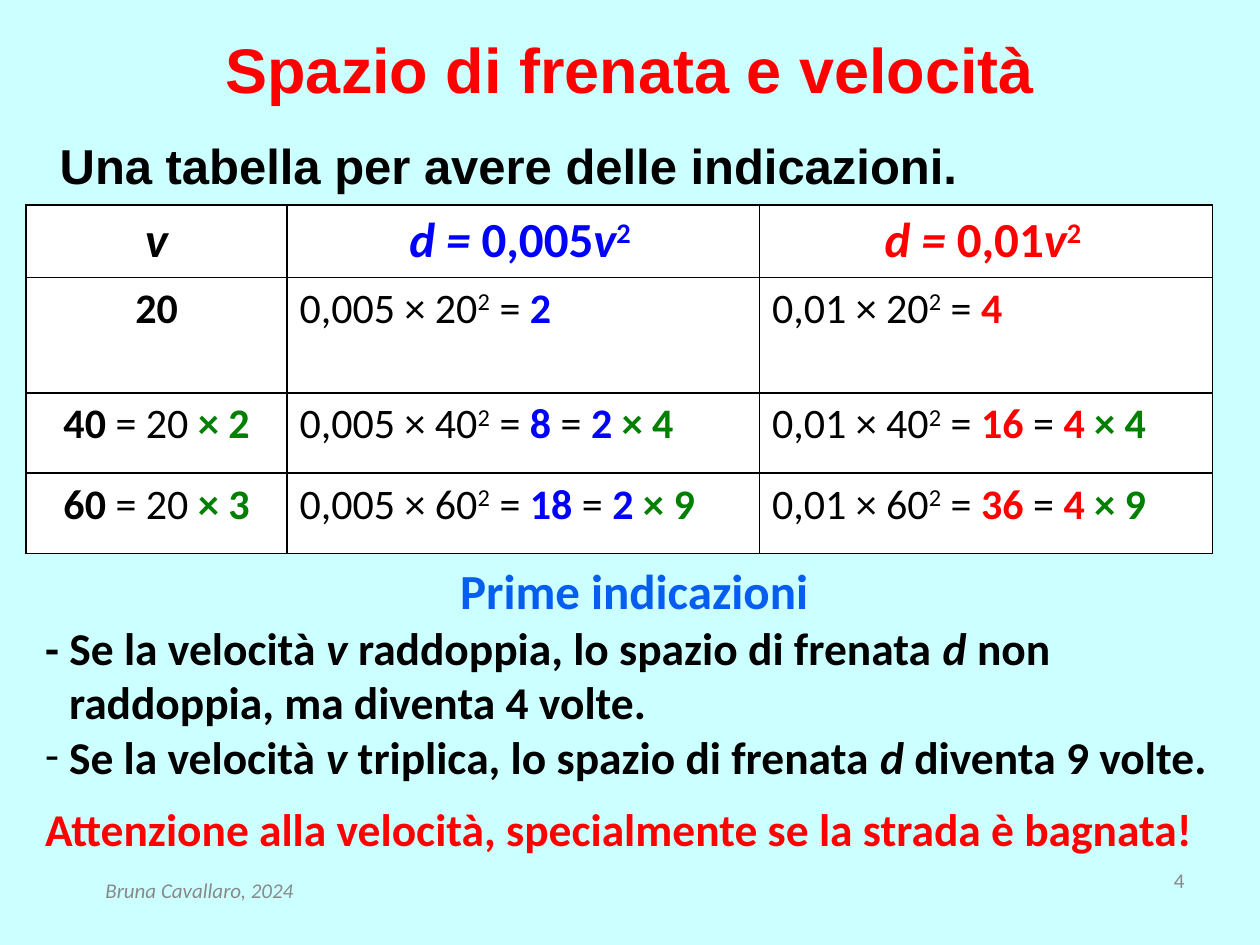
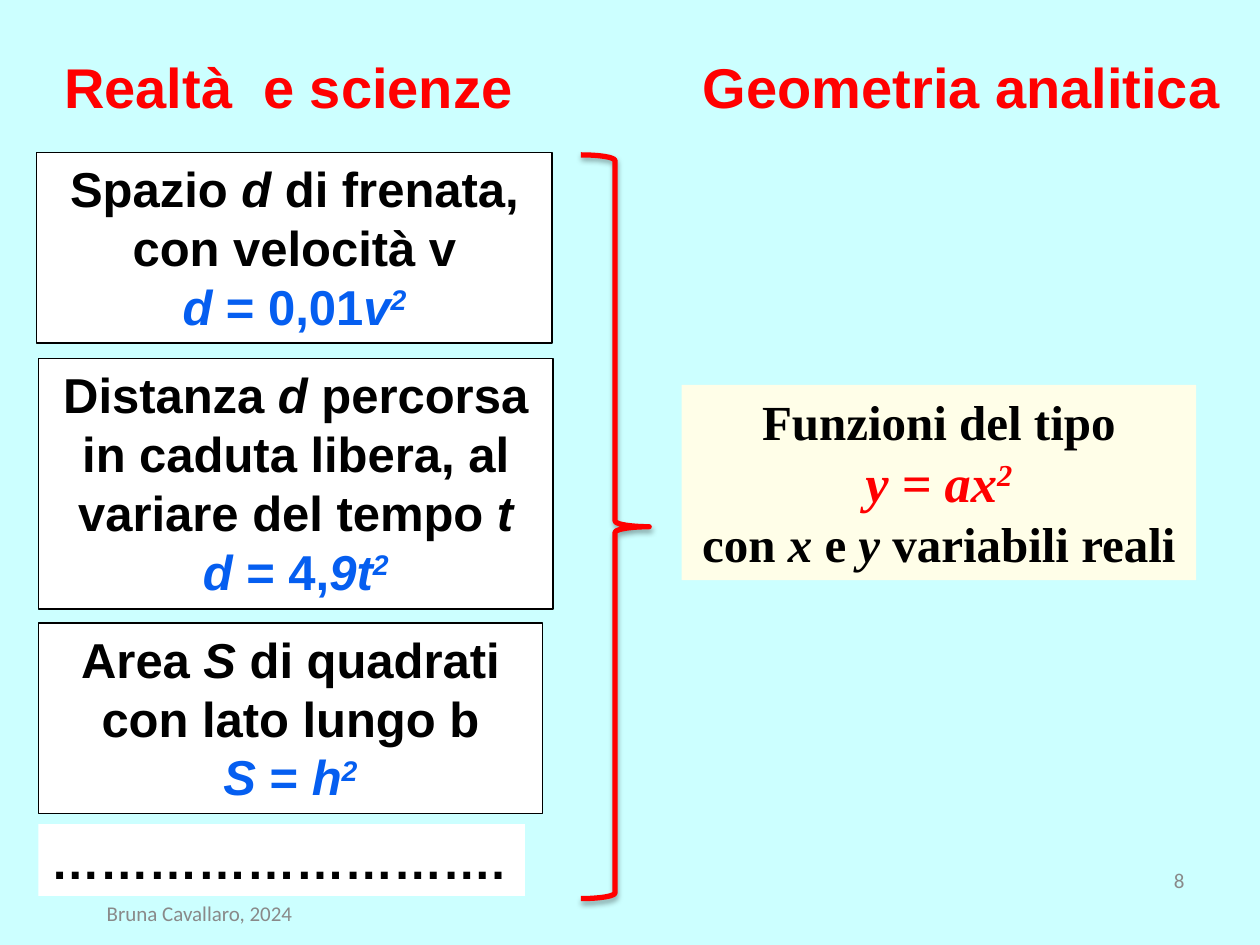
from lxml import etree
from pptx import Presentation
from pptx import util as u
from pptx.dml.color import RGBColor
from pptx.enum import shapes, text
from pptx.oxml import parse_xml
from pptx.oxml.ns import nsdecls, qn

Pt = u.Pt
LEFT, CENTER, RIGHT = text.PP_ALIGN.LEFT, text.PP_ALIGN.CENTER, text.PP_ALIGN.RIGHT
TOP, MIDDLE = text.MSO_ANCHOR.TOP, text.MSO_ANCHOR.MIDDLE
COLORS = {
    "background": "CCFFFF", "white": "FFFFFF", "cream": "FFFEE8",
    "black": "000000", "gray": "898989", "red": "FF0000",
    "blue": "0000FF", "azure": "055EF0", "green": "008000",
}
HEADING, BODY, SERIF = "Arial", "Calibri", "Times New Roman"


def rgb(name):
    return RGBColor.from_string(COLORS[name])


class SlideBuilder:
    def __init__(self, deck):
        self.deck = deck
        self.slide = None

    def new_slide(self, number, footer_top, footer_style=""):
        self.slide = self.deck.slides.add_slide(self.deck.slide_layouts[5])
        self.slide.background.fill.solid()
        self.slide.background.fill.fore_color.rgb = rgb("background")
        self.label((516, 492, 168, 37), [str(number)], BODY, 12, "gray", RIGHT, bold=False)
        self.label((0, footer_top, 228, 29), [[("Bruna Cavallaro, 2024", footer_style)]],
                   BODY, 12, "gray", CENTER, bold=False)

    def fill_frame(self, frame, lines, font, size, color="black", align=LEFT, anchor=TOP,
                   bold=True):
        frame.word_wrap = True
        frame.auto_size = text.MSO_AUTO_SIZE.NONE
        frame.vertical_anchor = anchor
        self.add_lines(frame, lines, font, size, color, align, bold)

    def add_lines(self, frame, lines, font, size, color="black", align=LEFT, bold=True):
        for index, line in enumerate(lines):
            para = frame.paragraphs[0] if index == 0 else frame.add_paragraph()
            para.alignment = align
            for words, style in [(line, "")] if isinstance(line, str) else line:
                marks = style.split()
                span = para.add_run()
                span.text = words
                span.font.name, span.font.size = font, Pt(size)
                span.font.bold = bold and "plain" not in marks
                span.font.italic = "italic" in marks
                span.font.color.rgb = rgb(next((m for m in marks if m in COLORS), color))
                if "super" in marks:
                    span.font._element.set("baseline", "30000")

    def title(self, area, words, size, align=LEFT):
        box = self.slide.shapes.title
        box.left, box.top, box.width, box.height = map(Pt, area)
        self.fill_frame(box.text_frame, [words], HEADING, size, "red", align, MIDDLE)

    def label(self, area, lines, *style, **options):
        box = self.slide.shapes.add_textbox(*map(Pt, area))
        self.fill_frame(box.text_frame, lines, *style, **options)
        return box

    def panel(self, area, lines, fill="white", outlined=True, font=HEADING, align=CENTER):
        box = self.slide.shapes.add_shape(shapes.MSO_SHAPE.RECTANGLE, *map(Pt, area))
        box.shadow.inherit = False
        box.fill.solid()
        box.fill.fore_color.rgb = rgb(fill)
        if outlined:
            box.line.color.rgb = rgb("black")
            box.line.width = Pt(0.75)
        else:
            box.line.fill.background()
        self.fill_frame(box.text_frame, lines, font, 28, align=align)
        return box

    def brace(self, area):
        brace = self.slide.shapes.add_shape(shapes.MSO_SHAPE.RIGHT_BRACE, *map(Pt, area))
        brace.fill.background()
        brace.line.color.rgb = rgb("red")
        brace.line.width = Pt(3)
        brace.shadow.inherit = False
        effects = brace._element.spPr.find(qn("a:effectLst"))
        effects.append(parse_xml(
            f'<a:outerShdw {nsdecls("a")} blurRad="{Pt(3.1)}" dist="{Pt(1.8)}" dir="5400000" '
            'rotWithShape="0"><a:srgbClr val="000000"><a:alpha val="35000"/></a:srgbClr>'
            '</a:outerShdw>'))

    def table(self, area, widths, heights, rows):
        table = self.slide.shapes.add_table(len(rows), len(widths), *map(Pt, area)).table
        table.first_row = table.horz_banding = False
        for column, width in zip(table.columns, widths):
            column.width = Pt(width)
        for row, height in zip(table.rows, heights):
            row.height = Pt(height)
        for r, row in enumerate(rows):
            for c, spans in enumerate(row):
                cell = table.cell(r, c)
                self.borders(cell)
                cell.fill.solid()
                cell.fill.fore_color.rgb = rgb("white")
                centered = r == 0 or c == 0
                self.add_lines(cell.text_frame, [spans], BODY, 28 if r == 0 else 24,
                               align=CENTER if centered else LEFT)

    def borders(self, cell):
        properties = cell._tc.get_or_add_tcPr()
        for side in ("lnL", "lnR", "lnT", "lnB"):
            line = etree.SubElement(properties, qn(f"a:{side}"), w=str(Pt(1)))
            fill = etree.SubElement(line, qn("a:solidFill"))
            etree.SubElement(fill, qn("a:srgbClr"), val=COLORS["black"])

    def hang(self, para, bullet=None):
        properties = para._p.get_or_add_pPr()
        properties.set("marL", str(Pt(14.4)))
        properties.set("indent", str(-Pt(13.7)))
        if bullet:
            etree.SubElement(properties, qn("a:buFont"), typeface=BODY)
            etree.SubElement(properties, qn("a:buChar"), char=bullet)


def formula_header(coefficient, color):
    return [("d = ", f"italic {color}"), (coefficient, color),
            ("v", f"italic {color}"), ("2 ", f"super {color}")]


def speed_cell(factor):
    spans = [(str(20 * factor), "")]
    if factor > 1:
        spans += [(" = 20 ", "plain"), (f"× {factor}", "green")]
    return spans


def distance_cell(coefficient, color, base, factor):
    square = factor ** 2
    spans = [(f"{coefficient} × {20 * factor}", "plain"), ("2", "plain super"),
             (" = ", "plain"), (str(base * square), color)]
    if factor > 1:
        spans += [(" = ", "plain"), (f"{base} ", color), (f"× {square}", "green")]
    return spans


def braking_slide(page):
    page.new_slide(4, 498, "italic")
    page.title((36, 12, 648, 54), "Spazio di frenata e velocità", 36, CENTER)
    page.label((27, 74, 666, 48), ["Una tabella per avere delle indicazioni."], HEADING, 28)

    roads = [("0,005", "blue", 2), ("0,01", "red", 4)]
    header = [[("v", "italic")]] + [formula_header(*road[:2]) for road in roads]
    rows = [header] + [[speed_cell(n)] + [distance_cell(*road, n) for road in roads]
                       for n in (1, 2, 3)]
    page.table((15, 117, 678, 199), (149, 270, 259), (41, 66, 46, 46), rows)

    notes = page.label((18, 317, 688, 177), [
        [("Prime indicazioni", "azure")],
        [("- Se la velocità ", ""), ("v", "italic"), (" raddoppia, lo spazio di frenata ", ""),
         ("d", "italic"), (" non raddoppia, ma diventa 4 volte.", "")],
        [("Se la velocità ", ""), ("v", "italic"), (" triplica, lo spazio di frenata ", ""),
         ("d", "italic"), (" diventa 9 volte.", "")],
        [("Attenzione alla velocità, specialmente se la strada è bagnata!", "red")],
    ], BODY, 26)
    heading, doubled, tripled, warning = notes.text_frame.paragraphs
    heading.alignment = CENTER
    heading.runs[0].font.size = Pt(28)
    warning.space_before = Pt(10)
    for para in (heading, doubled, warning):
        page.hang(para)
    page.hang(tripled, "-")


def functions_slide(page):
    page.new_slide(8, 511)
    page.title((29.5, 11, 278, 76), "Realtà  e scienze", 32)
    page.label((394.5, 11, 311, 76), ["Geometria analitica"], HEADING, 32, "red", anchor=MIDDLE)

    page.panel((21, 87, 294.5, 109), [
        [("Spazio ", ""), ("d", "italic"), (" di frenata, con velocità v", "")],
        [("d", "italic azure"), (" = 0,01", "azure"), ("v", "italic azure"),
         ("2", "italic super azure")]])
    page.panel((22, 205, 294, 143), [
        [("Distanza ", ""), ("d", "italic"),
         (" percorsa in caduta libera, al variare del tempo ", ""), ("t", "italic")],
        [("d", "italic azure"), (" = 4,", "azure"), ("9t", "italic azure"),
         ("2", "italic super azure")]])
    page.panel((22, 356, 288, 109), [
        [("Area ", ""), ("S", "italic"), (" di quadrati con lato lungo b", "")],
        [("S", "italic azure"), (" = ", "azure"), ("h", "italic azure"),
         ("2", "italic super azure")]])
    page.panel((22, 471, 278, 41), ["………………………."], outlined=False, align=LEFT)

    family = page.panel((389.5, 220, 294, 111.5), [
        "Funzioni del tipo",
        [("y = ax", "italic red"), ("2", "italic super red")],
        [("con", ""), (" x", "italic"), (" e ", ""), ("y", "italic"), (" variabili reali", "")],
    ], "cream", outlined=False, font=SERIF)
    for span in family.text_frame.paragraphs[1].runs:
        span.font.size = Pt(30)
    page.brace((332, 88.5, 39, 425))


def main():
    deck = Presentation()
    deck.slide_width, deck.slide_height = Pt(720), Pt(540)
    page = SlideBuilder(deck)
    braking_slide(page)
    functions_slide(page)
    deck.save("out.pptx")


if __name__ == "__main__":
    main()
